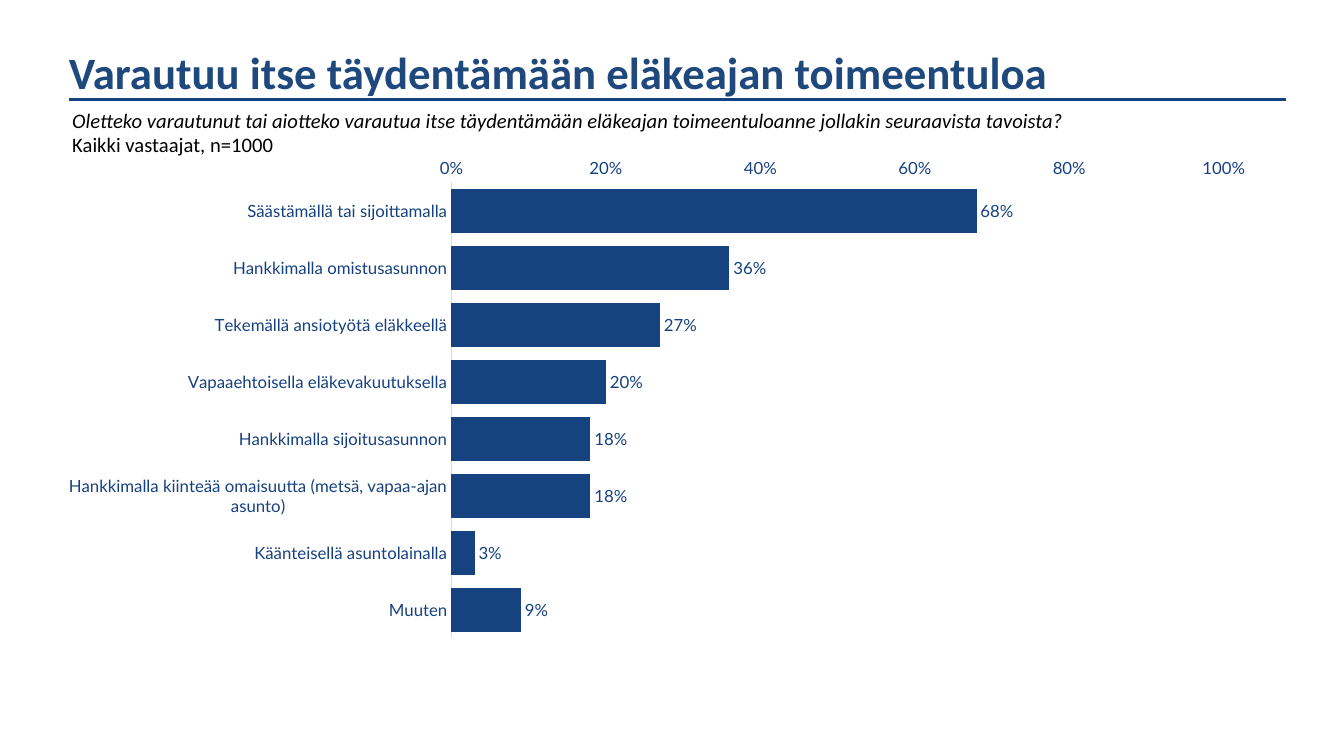
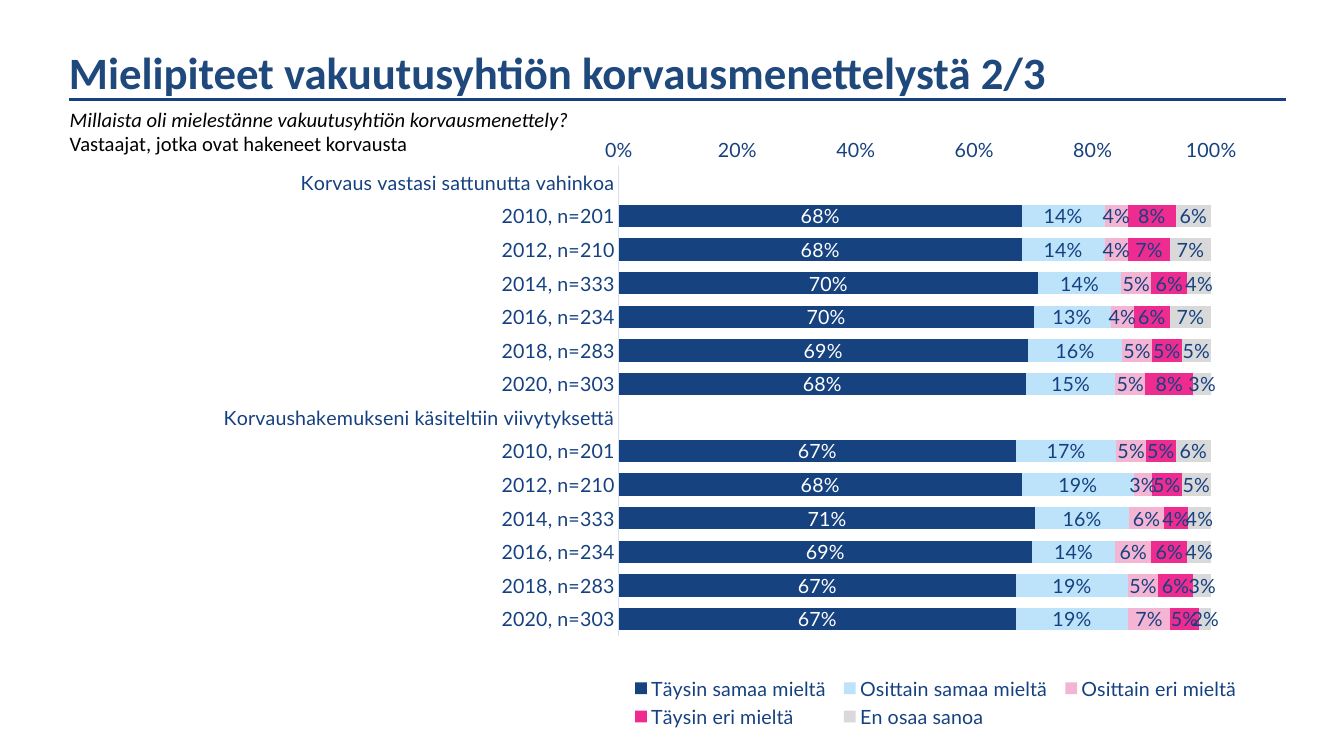
from dataclasses import dataclass

from lxml.etree import SubElement
from pptx import Presentation
from pptx.chart.chart import Chart
from pptx.chart.data import CategoryChartData
from pptx.dml.color import RGBColor
from pptx.enum.chart import XL_AXIS_CROSSES as Crosses
from pptx.enum.chart import XL_CHART_TYPE as ChartType
from pptx.enum.chart import XL_LABEL_POSITION as LabelPosition
from pptx.enum.chart import XL_LEGEND_POSITION as LegendPosition
from pptx.enum.chart import XL_TICK_MARK as TickMark
from pptx.enum.shapes import MSO_CONNECTOR as Connector
from pptx.enum.text import MSO_ANCHOR as Anchor
from pptx.enum.text import MSO_AUTO_SIZE as AutoSize
from pptx.enum.text import PP_ALIGN as Align
from pptx.oxml import parse_xml
from pptx.oxml.ns import nsdecls, qn
from pptx.slide import Slide
from pptx.text.text import Font
from pptx.util import Inches, Pt

COLUMNS, ROWS = 160, 90
SLIDE_WIDTH, SLIDE_HEIGHT = Inches(13.33), Inches(7.5)

COLOURS = {
    "title": "1F497D",
    "text": "000000",
    "chart text": "164180",
    "axis": "D1E0F7",
    "navy": "164280",
    "sky": "BCE3FA",
    "rose": "F4B5D3",
    "pink": "EE2C90",
    "grey": "D9D9D9",
    "white": "FFFFFF",
}
TITLE_FONT, CHART_FONT = "Calibri", "Lato"


@dataclass(frozen=True)
class Frame:
    """A rectangle in grid columns and rows, or in percent of a chart."""
    left: float
    top: float
    width: float
    height: float


@dataclass(frozen=True)
class Answer:
    name: str
    percents: list[int | None]
    fill: str
    label: str = "chart text"


@dataclass(frozen=True)
class Survey:
    title: str
    question: str
    respondents: str
    question_frame: Frame
    chart_frame: Frame
    chart_type: ChartType
    label_position: LabelPosition
    text_size: int
    gap: int
    plot: Frame
    categories: list[str]
    answers: list[Answer]
    legend: Frame | None = None


TITLE_FRAME = Frame(7, 4.7, 144.8, 7.7)
RULE = Frame(8.2, 11.9, 144.9, 0)
YEARS = ["2010, n=201", "2012, n=210", "2014, n=333",
         "2016, n=234", "2018, n=283", "2020, n=303"]

SURVEYS = [
    Survey(
        title="Varautuu itse täydentämään eläkeajan toimeentuloa",
        question="Oletteko varautunut tai aiotteko varautua itse täydentämään "
                 "eläkeajan toimeentuloanne jollakin seuraavista tavoista?",
        respondents="Kaikki vastaajat, n=1000",
        question_frame=Frame(7.4, 12.2, 145.6, 7.1),
        chart_frame=Frame(2.5, 17.2, 146.4, 63.1),
        chart_type=ChartType.BAR_CLUSTERED,
        label_position=LabelPosition.OUTSIDE_END,
        text_size=12,
        gap=30,
        plot=Frame(35, 7.1, 62.8, 86.1),
        categories=[
            "Säästämällä tai sijoittamalla",
            "Hankkimalla omistusasunnon",
            "Tekemällä ansiotyötä eläkkeellä",
            "Vapaaehtoisella eläkevakuutuksella",
            "Hankkimalla sijoitusasunnon",
            "Hankkimalla kiinteää omaisuutta (metsä, vapaa-ajan asunto)",
            "Käänteisellä asuntolainalla",
            "Muuten",
        ],
        answers=[Answer("Series 1", [68, 36, 27, 20, 18, 18, 3, 9], "navy")],
    ),
    Survey(
        title="Mielipiteet vakuutusyhtiön korvausmenettelystä 2/3",
        question="Millaista oli mielestänne vakuutusyhtiön korvausmenettely?",
        respondents="Vastaajat, jotka ovat hakeneet korvausta",
        question_frame=Frame(7.1, 12.1, 145.6, 7.1),
        chart_frame=Frame(3.6, 15.4, 145.7, 72.2),
        chart_type=ChartType.BAR_STACKED_100,
        label_position=LabelPosition.CENTER,
        text_size=14,
        gap=50,
        plot=Frame(48.1, 6, 48.4, 77.5),
        categories=["Korvaus vastasi sattunutta vahinkoa", *YEARS,
                    "Korvaushakemukseni käsiteltiin viivytyksettä", *YEARS],
        answers=[
            Answer("Täysin samaa mieltä",
                   [None, 68, 68, 70, 70, 69, 68, None, 67, 68, 71, 69, 67, 67],
                   "navy", "white"),
            Answer("Osittain samaa mieltä",
                   [None, 14, 14, 14, 13, 16, 15, None, 17, 19, 16, 14, 19, 19],
                   "sky"),
            Answer("Osittain eri mieltä",
                   [None, 4, 4, 5, 4, 5, 5, None, 5, 3, 6, 6, 5, 7], "rose"),
            Answer("Täysin eri mieltä",
                   [None, 8, 7, 6, 6, 5, 8, None, 5, 5, 4, 6, 6, 5], "pink"),
            Answer("En osaa sanoa",
                   [None, 6, 7, 4, 7, 5, 3, None, 6, 5, 4, 4, 3, 2], "grey"),
        ],
        legend=Frame(48.5, 89.5, 51, 10),
    ),
]


def colour(name: str) -> RGBColor:
    return RGBColor.from_string(COLOURS[name])


def on_grid(frame: Frame) -> tuple[int, int, int, int]:
    """Left, top, width and height in slide units."""
    column, row = SLIDE_WIDTH / COLUMNS, SLIDE_HEIGHT / ROWS
    return (round(frame.left * column), round(frame.top * row),
            round(frame.width * column), round(frame.height * row))


def style(font: Font, name: str, size: float, tint: str,
          bold: bool = False, italic: bool = False) -> None:
    font.name, font.size = name, Pt(size)
    font.bold, font.italic = bold, italic
    font.color.rgb = colour(tint)


def fill_placeholder(placeholder, frame: Frame, lines: list[str]) -> list:
    """Place plain left-aligned lines and return their paragraphs."""
    (placeholder.left, placeholder.top,
     placeholder.width, placeholder.height) = on_grid(frame)
    text_frame = placeholder.text_frame
    text_frame.text = "\n".join(lines)
    text_frame.word_wrap = True
    text_frame.auto_size = AutoSize.NONE
    text_frame.vertical_anchor = Anchor.TOP
    for para in text_frame.paragraphs:
        para.alignment = Align.LEFT
        para.space_before = Pt(0)
        properties = para._p.get_or_add_pPr()
        properties.set("marL", "0")
        properties.set("indent", "0")
        SubElement(properties, qn("a:buNone"))
    return list(text_frame.paragraphs)


def add_heading(page: Slide, survey: Survey) -> None:
    title, = fill_placeholder(page.shapes.title, TITLE_FRAME, [survey.title])
    style(title.runs[0].font, TITLE_FONT, 32, "title", bold=True)
    paras = fill_placeholder(page.placeholders[1], survey.question_frame,
                             [survey.question, survey.respondents])
    for para, italic in zip(paras, (True, False)):
        style(para.runs[0].font, TITLE_FONT, 14.7, "text", italic=italic)

    left, top, width, height = on_grid(RULE)
    rule = page.shapes.add_connector(Connector.STRAIGHT, left, top,
                                     left + width, top + height)
    rule.line.color.rgb = colour("chart text")
    rule.line.width = Pt(2.25)
    SubElement(rule._element.spPr, qn("a:effectLst"))


def set_layout(parent, index: int, frame: Frame, inner: bool = False) -> None:
    """Fix a plot area or legend at a share of its chart."""
    for old in parent.findall(qn("c:layout")):
        parent.remove(old)
    layout = parse_xml(f"<c:layout {nsdecls('c')}><c:manualLayout/></c:layout>")
    settings = [("layoutTarget", "inner")] if inner else []
    settings += [("xMode", "edge"), ("yMode", "edge")]
    shares = (frame.left, frame.top, frame.width, frame.height)
    settings += [(tag, f"{share / 100:.3f}") for tag, share in zip("xywh", shares)]
    for tag, value in settings:
        SubElement(layout[0], qn(f"c:{tag}")).set("val", value)
    parent.insert(index, layout)


def format_axes(chart: Chart) -> None:
    categories, values = chart.category_axis, chart.value_axis
    for axis in (categories, values):
        axis.has_major_gridlines = False
        axis.major_tick_mark = axis.minor_tick_mark = TickMark.NONE
    categories.reverse_order = True
    categories.crosses = Crosses.MAXIMUM
    categories.format.line.color.rgb = colour("axis")
    categories.format.line.width = Pt(0.75)
    values.minimum_scale, values.maximum_scale, values.major_unit = 0, 1, 0.2
    values.format.line.fill.background()
    values.tick_labels.number_format = "0%"
    values.tick_labels.number_format_is_linked = False


def add_survey_chart(page: Slide, survey: Survey) -> None:
    data = CategoryChartData(number_format="0%")
    data.categories = survey.categories
    for answer in survey.answers:
        data.add_series(answer.name, [None if percent is None else percent / 100
                                      for percent in answer.percents])
    chart = page.shapes.add_chart(survey.chart_type,
                                  *on_grid(survey.chart_frame), data).chart
    chart.has_title = False
    style(chart.font, CHART_FONT, survey.text_size, "chart text")
    format_axes(chart)

    plot = chart.plots[0]
    plot.gap_width = survey.gap
    plot.vary_by_categories = False
    for series, answer in zip(plot.series, survey.answers):
        series.format.fill.solid()
        series.format.fill.fore_color.rgb = colour(answer.fill)
        series.invert_if_negative = False
        labels = series.data_labels
        labels.show_value = True
        labels.number_format = "0%"
        labels.number_format_is_linked = False
        labels.position = survey.label_position
        style(labels.font, CHART_FONT, survey.text_size, answer.label)
    set_layout(chart._chartSpace.chart.plotArea, 0, survey.plot, inner=True)

    chart.has_legend = survey.legend is not None
    if survey.legend:
        chart.legend.position = LegendPosition.BOTTOM
        chart.legend.include_in_layout = False
        set_layout(chart.legend._element, 1, survey.legend)


def main() -> None:
    deck = Presentation()
    deck.slide_width, deck.slide_height = SLIDE_WIDTH, SLIDE_HEIGHT
    for survey in SURVEYS:
        page = deck.slides.add_slide(deck.slide_layouts[1])
        add_survey_chart(page, survey)
        add_heading(page, survey)
    deck.save("out.pptx")


if __name__ == "__main__":
    main()
